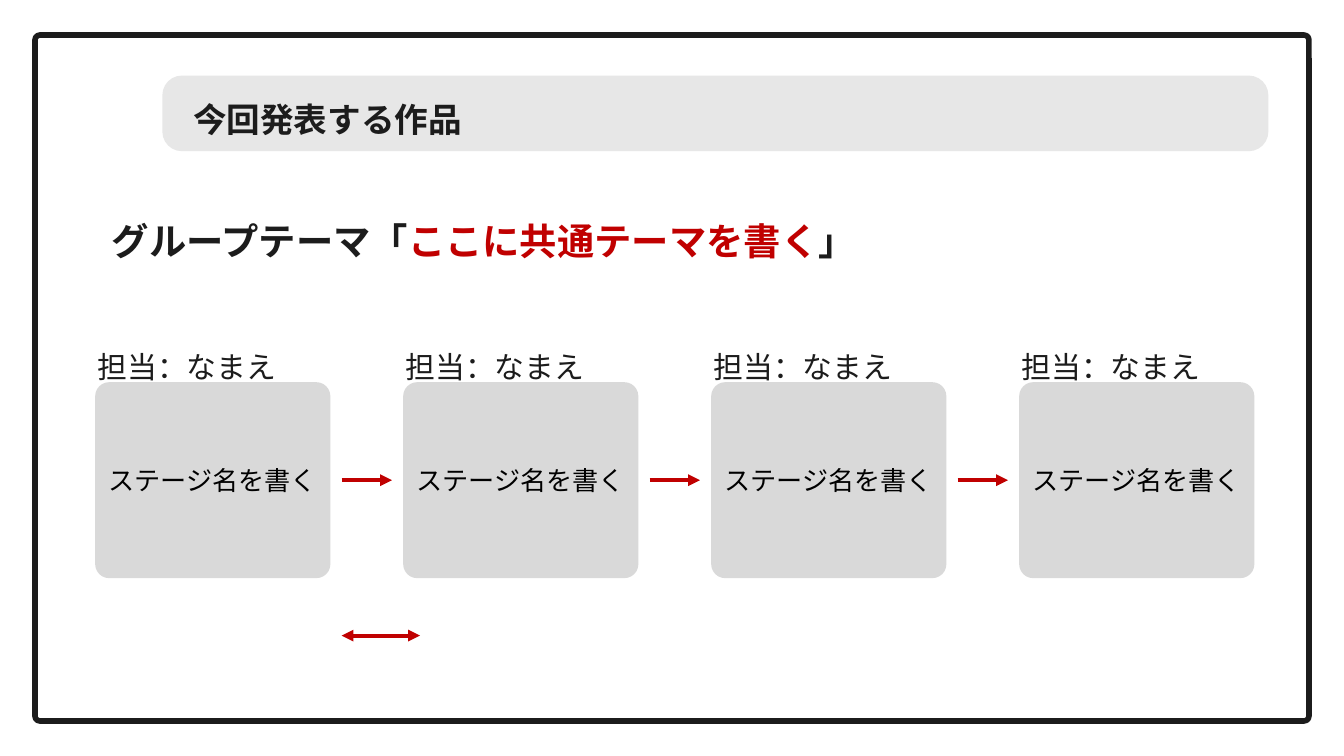
"""Build the slide that lists the works presented, stage by stage."""
from lxml.etree import SubElement
from pptx import Presentation
from pptx.dml.color import RGBColor
from pptx.enum.shapes import MSO_CONNECTOR as Connector, MSO_SHAPE as Shape
from pptx.enum.text import MSO_ANCHOR as Anchor, MSO_AUTO_SIZE as AutoSize, PP_ALIGN as Align
from pptx.oxml.ns import qn
from pptx.util import Pt

PX = 9525
FONT = "Noto Sans CJK JP"
COLORS = {
    "ink": "1C1C1C",
    "black": "000000",
    "white": "FFFFFF",
    "banner": "E7E7E7",
    "card": "D9D9D9",
    "accent": "C00000",
}


def add_panel(left, top, width, height, radius, fill):
    panel = page.shapes.add_shape(
        Shape.ROUNDED_RECTANGLE, left * PX, top * PX, width * PX, height * PX
    )
    panel.adjustments[0] = radius / min(width, height)
    panel.shadow.inherit = False
    panel.fill.solid()
    panel.fill.fore_color.rgb = RGBColor.from_string(COLORS[fill])
    panel.line.fill.background()
    return panel


def write(para, spans, size, bold=False):
    for text, color in spans:
        span = para.add_run()
        span.text = text
        style = {"name": FONT, "size": Pt(size), "bold": bold}
        for key, value in style.items():
            setattr(span.font, key, value)
        span.font.color.rgb = RGBColor.from_string(COLORS[color])
        SubElement(span._r.get_or_add_rPr(), qn("a:ea"), typeface=FONT)


deck = Presentation()
deck.slide_width, deck.slide_height = 1920 * PX, 1080 * PX
page = deck.slides.add_slide(deck.slide_layouts[6])

frame = add_panel(50, 50, 1820, 980, 7, "white")
frame.line.color.rgb = RGBColor.from_string(COLORS["ink"])
frame.line.width = Pt(6)
add_panel(232, 108, 1580, 108, 28, "banner")

card_left, card_top, card_width, card_height = 136, 546, 336, 280
card_count, card_step = 4, 440
card_lefts = [card_left + card_step * index for index in range(card_count)]

for left in card_lefts:
    card = add_panel(left, card_top, card_width, card_height, 20, "card")
    card.text_frame.vertical_anchor = Anchor.MIDDLE
    para = card.text_frame.paragraphs[0]
    para.alignment = Align.CENTER
    write(para, [("ステージ名を書く", "black")], 28)

theme = [
    ("グループテーマ「", "ink"),
    ("ここに共通テーマを書く", "accent"),
    ("」", "ink"),
]
labels = [
    (276, 132, 850, 58, [("今回発表する作品", "ink")], 36, True),
    (160, 308, 1480, 59, theme, 40, True),
]
for left in card_lefts:
    labels.append((left + 3, 482, 333, 59, [("担当：なまえ", "ink")], 32, False))

box_format = {
    "word_wrap": True,
    "auto_size": AutoSize.SHAPE_TO_FIT_TEXT,
    "margin_left": 0,
    "margin_top": 0,
    "margin_right": 0,
    "margin_bottom": 0,
}
for left, top, width, height, spans, size, bold in labels:
    box = page.shapes.add_textbox(left * PX, top * PX, width * PX, height * PX)
    for key, value in box_format.items():
        setattr(box.text_frame, key, value)
    para = box.text_frame.paragraphs[0]
    para.line_spacing = Pt(50.4)
    write(para, spans, size, bold)

arrow_y = card_top + card_height // 2
arrows = []
for left in card_lefts[:-1]:
    start = left + card_width + 16
    arrows.append((start, start + 72, arrow_y, ["a:tailEnd"]))
arrows.append((600, 488, 908, ["a:headEnd", "a:tailEnd"]))

for start, end, y, tips in arrows:
    arrow = page.shapes.add_connector(
        Connector.STRAIGHT, start * PX, y * PX, end * PX, y * PX
    )
    arrow.line.color.rgb = RGBColor.from_string(COLORS["accent"])
    arrow.line.width = Pt(4.25)
    for tip in tips:
        SubElement(arrow.line._get_or_add_ln(), qn(tip), type="triangle")
    SubElement(arrow._element.spPr, qn("a:effectLst"))

deck.save("out.pptx")
